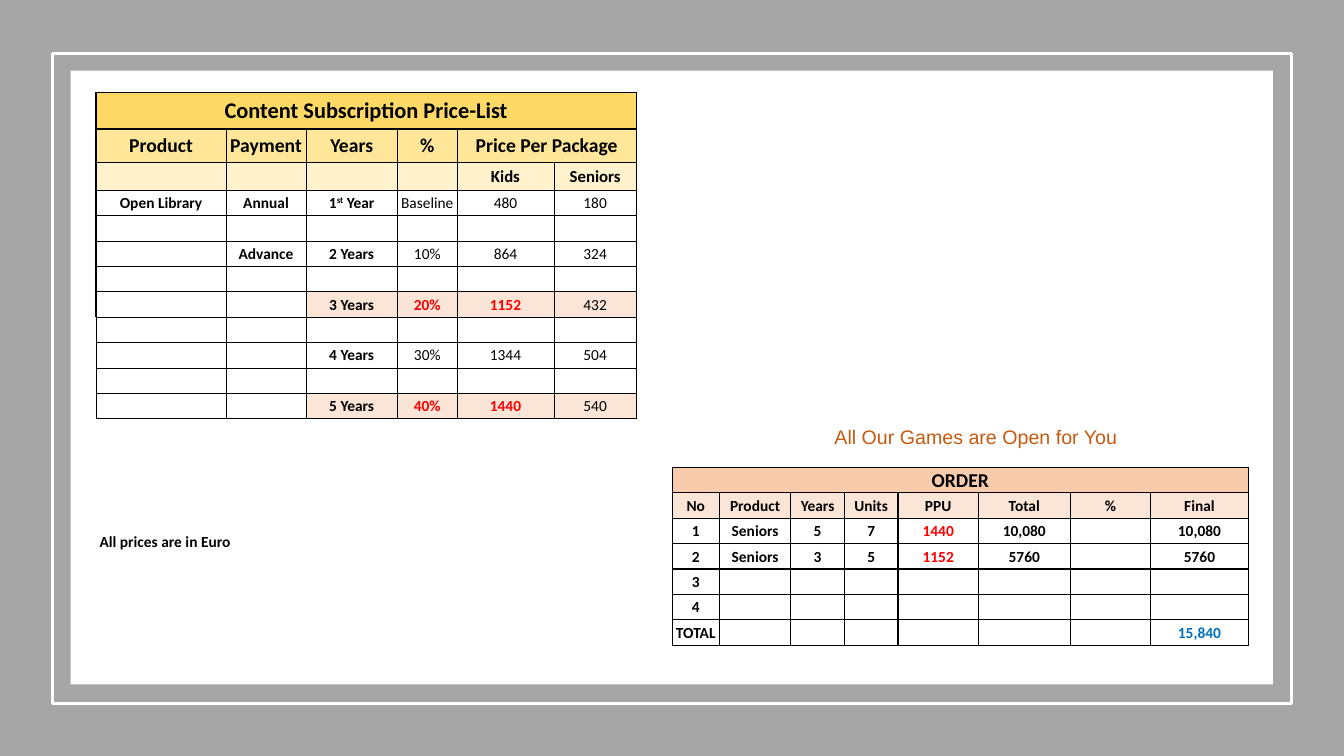
from lxml.etree import SubElement
from pptx import Presentation
from pptx.dml.color import RGBColor
from pptx.enum.shapes import MSO_SHAPE
from pptx.enum.text import MSO_ANCHOR, PP_ALIGN
from pptx.oxml.ns import qn
from pptx.util import Cm, Pt

COLORS = {
    "grey": "A6A6A6", "white": "FFFFFF", "black": "000000", "red": "FF0000",
    "blue": "0070C0", "rust": "C55A11", "peach": "F8CBAD", "blush": "FBE5D6",
    "gold": "FFD966", "honey": "FFE699", "cream": "FFF2CC",
}

PRICE_ROWS = [
    ["Content Subscription Price-List"],
    ["Product", "Payment", "Years", "%", "Price Per Package"],
    ["", "", "", "", "Kids", "Seniors"],
    ["Open Library", "Annual", "1^st^ Year", "Baseline", "480", "180"],
    [],
    ["", "Advance", "2 Years", "10%", "864", "324"],
    [],
    ["", "", "3 Years", "20%", "1152", "432"],
    [],
    ["", "", "4 Years", "30%", "1344", "504"],
    [],
    ["", "", "5 Years", "40%", "1440", "540"],
]
PRICE_WIDTHS = [3.28, 2.01, 2.31, 1.5, 2.44, 2.08]
PRICE_HEIGHTS = [0.91, 0.84, 0.7] + [0.64] * 9
PRICE_HEADERS = [(16, "gold"), (14, "honey"), (12, "cream")]
OFFER_ROWS = (7, 11)

ORDER_ROWS = [
    ["ORDER"],
    ["No", "Product", "Years", "Units", "PPU", "Total", "%", "Final"],
    ["1", "Seniors", "5", "7", "1440", "10,080", "", "10,080"],
    ["2", "Seniors", "3", "5", "1152", "5760", "", "5760"],
    ["3"],
    ["4"],
    ["TOTAL", "", "", "", "", "", "", "15,840"],
]
ORDER_WIDTHS = [1.19, 1.8, 1.35, 1.35, 2.03, 2.31, 2.03, 2.46]
ORDER_HEIGHTS = [0.64] * 7


def rgb(name):
    return RGBColor.from_string(COLORS[name])


def set_font(font, size, color, bold=False, name="Calibri"):
    font.name = name
    font.size = Pt(size)
    font.bold = bold
    font.color.rgb = rgb(color)


def add_panel(page, left, top, width, height, fill=None, line=None):
    panel = page.shapes.add_shape(
        MSO_SHAPE.RECTANGLE, Cm(left), Cm(top), Cm(width), Cm(height))
    panel.shadow.inherit = False
    if fill:
        panel.fill.solid()
        panel.fill.fore_color.rgb = rgb(fill)
    else:
        panel.fill.background()
    if line:
        panel.line.color.rgb = rgb(line)
        panel.line.width = Pt(2)
    else:
        panel.line.fill.background()


def add_label(page, text, left, top, width, height, **style):
    box = page.shapes.add_textbox(Cm(left), Cm(top), Cm(width), Cm(height))
    box.text_frame.word_wrap = True
    para = box.text_frame.paragraphs[0]
    para.text = text
    set_font(para.font, **style)


def set_borders(cell, left, right, top, bottom):
    properties = cell._tc.get_or_add_tcPr()
    sides = {"a:lnL": left, "a:lnR": right, "a:lnT": top, "a:lnB": bottom}
    for tag, width in sides.items():
        line = SubElement(properties, qn(tag), w=str(Pt(width)))
        fill = SubElement(line, qn("a:solidFill"))
        SubElement(fill, qn("a:srgbClr"), val=COLORS["black"])


def fill_cell(cell, text, borders, size, fill, color, bold):
    set_borders(cell, *borders)
    if fill:
        cell.fill.solid()
        cell.fill.fore_color.rgb = rgb(fill)
    else:
        cell.fill.background()
    cell.vertical_anchor = MSO_ANCHOR.MIDDLE
    cell.margin_left = cell.margin_right = cell.margin_top = Cm(0.02)
    cell.margin_bottom = 0
    para = cell.text_frame.paragraphs[0]
    para.alignment = PP_ALIGN.CENTER
    set_font(para.font, size, color, bold)
    if not text:
        SubElement(para._p, qn("a:endParaRPr"), sz=str(size * 100))
        return
    for index, part in enumerate(text.split("^")):
        span = para.add_run()
        span.text = part
        if index % 2:
            span.font._element.set("baseline", "30000")


def price_borders(row, column):
    edge = 1 if row < 8 else 0.5
    inside = 1 if row == 0 else 0.25
    return (edge if column == 0 else inside,
            edge if column == len(PRICE_WIDTHS) - 1 else inside,
            1 if row < 3 else 0.5,
            1 if row < 2 else 0.5)


def price_style(row, column):
    if row < len(PRICE_HEADERS):
        size, fill = PRICE_HEADERS[row]
        return size, fill, "black", True
    offer = row in OFFER_ROWS
    highlight = offer and column in (3, 4)
    return (11, "blush" if offer and column > 1 else None,
            "red" if highlight else "black", column < 3 or highlight)


def order_borders(row, column):
    return 1, 1, 1, 1


def order_style(row, column):
    if row < 2:
        return (14, "peach", "black", True) if row == 0 else (11, "blush", "black", True)
    color = "red" if column == 4 else "black"
    if (row, column) == (6, 7):
        color = "blue"
    return 11, None, color, True


def add_grid(page, left, top, rows, widths, heights, merges, borders, style):
    frame = page.shapes.add_table(len(rows), len(widths), Cm(left), Cm(top),
                                  Cm(sum(widths)), Cm(sum(heights)))
    table = frame.table
    table.first_row = table.horz_banding = False
    for column, width in zip(table.columns, widths):
        column.width = Cm(width)
    for row, height in zip(table.rows, heights):
        row.height = Cm(height)
    for row, first, last in merges:
        table.cell(row, first).merge(table.cell(row, last))
    for row, texts in enumerate(rows):
        for column in range(len(widths)):
            text = texts[column] if column < len(texts) else ""
            fill_cell(table.cell(row, column), text, borders(row, column),
                      *style(row, column))


def main():
    deck = Presentation()
    deck.slide_width, deck.slide_height = Cm(33.87), Cm(19.05)
    page = deck.slides.add_slide(deck.slide_layouts[6])
    add_panel(page, 0, 0, 33.87, 19.05, fill="grey")
    add_panel(page, 1.32, 1.34, 31.22, 16.38, line="white")
    add_panel(page, 1.78, 1.78, 30.3, 15.47, fill="white")
    add_label(page, "All Our Games are Open for You", 20.78, 10.59, 8.43, 0.86,
              size=14, color="rust", name="Arial")
    add_label(page, "All prices are in Euro", 2.26, 13.28, 6.15, 0.74,
              size=11, color="black", bold=True)
    add_grid(page, 16.94, 11.78, ORDER_ROWS, ORDER_WIDTHS, ORDER_HEIGHTS,
             [(0, 0, 7)], order_borders, order_style)
    add_grid(page, 2.42, 2.34, PRICE_ROWS, PRICE_WIDTHS, PRICE_HEIGHTS,
             [(0, 0, 5), (1, 4, 5)], price_borders, price_style)
    deck.save("out.pptx")


if __name__ == "__main__":
    main()
